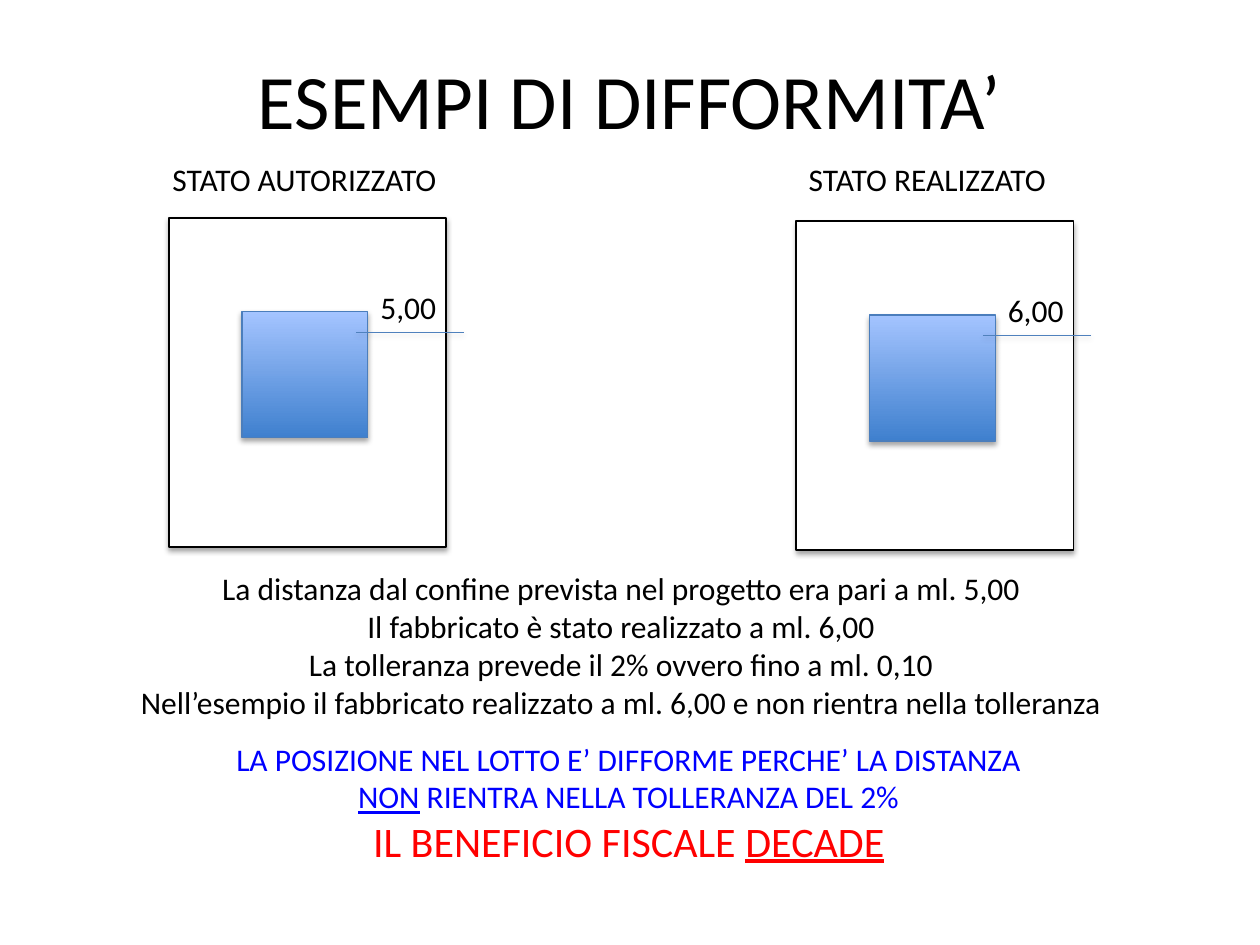
"""Build a slide comparing an authorised and an actual building position."""
from dataclasses import dataclass
from typing import NamedTuple

from lxml.etree import SubElement
from pptx import Presentation
from pptx.dml.color import RGBColor
from pptx.enum.shapes import MSO_CONNECTOR, MSO_SHAPE
from pptx.enum.text import MSO_ANCHOR, MSO_AUTO_SIZE, PP_ALIGN
from pptx.oxml.ns import qn
from pptx.util import Emu, Inches, Pt

COLUMNS, ROWS = 100, 75
SLIDE_WIDTH, SLIDE_HEIGHT = Inches(10), Inches(7.5)


@dataclass(frozen=True)
class Theme:
    font: str = "Calibri"
    title_size: int = 44
    body_size: int = 18
    verdict_size: int = 24
    ink: str = "000000"
    paper: str = "FFFFFF"
    finding: str = "0000FF"
    verdict: str = "FF0000"
    building_low: str = "3F80CE"
    building_high: str = "A4C4FF"
    building_edge: str = "4B7EBC"
    distance: str = "4F81BD"


THEME = Theme()


class Area(NamedTuple):
    column: float
    row: float
    columns: float
    rows: float

    def lengths(self) -> tuple[Emu, Emu, Emu, Emu]:
        across, down = SLIDE_WIDTH / COLUMNS, SLIDE_HEIGHT / ROWS
        return (Emu(round(self.column * across)), Emu(round(self.row * down)),
                Emu(round(self.columns * across)), Emu(round(self.rows * down)))


class Span(NamedTuple):
    text: str
    color: str = THEME.ink
    size: int = THEME.body_size
    underline: bool = False


class Plot(NamedTuple):
    heading: str
    heading_area: Area
    distance: str
    column: float
    row: float


PLOTS = (
    Plot("STATO AUTORIZZATO", Area(12.7, 12.2, 24.1, 4), "5,00", 13.4, 17.3),
    Plot("STATO REALIZZATO", Area(63.2, 12.2, 21.8, 4), "6,00", 63.2, 17.55),
)
EXPLANATION = (
    "La distanza dal confine prevista nel progetto era pari a ml. 5,00",
    "Il fabbricato è stato realizzato a ml. 6,00",
    "La tolleranza prevede il 2% ovvero fino a ml. 0,10",
    "Nell’esempio il fabbricato realizzato a ml. 6,00 e non rientra nella tolleranza",
)
CONCLUSION = (
    (Span("LA POSIZIONE NEL LOTTO E’ DIFFORME PERCHE’ LA DISTANZA ", THEME.finding),
     Span("NON", THEME.finding, underline=True),
     Span(" RIENTRA NELLA TOLLERANZA DEL 2%", THEME.finding)),
    (Span("IL BENEFICIO FISCALE ", THEME.verdict, THEME.verdict_size),
     Span("DECADE", THEME.verdict, THEME.verdict_size, True)),
)


def rgb(color: str) -> RGBColor:
    return RGBColor.from_string(color)


def write(frame, paragraphs, *, align=PP_ALIGN.LEFT) -> None:
    for index, spans in enumerate(paragraphs):
        paragraph = frame.paragraphs[0] if index == 0 else frame.add_paragraph()
        paragraph.alignment = align
        for span in spans:
            run = paragraph.add_run()
            run.text = span.text
            run.font.name = THEME.font
            run.font.size = Pt(span.size)
            run.font.color.rgb = rgb(span.color)
            run.font.underline = span.underline


def add_text(slide, area: Area, paragraphs, *, align=PP_ALIGN.LEFT, wrap=False) -> None:
    frame = slide.shapes.add_textbox(*area.lengths()).text_frame
    frame.word_wrap = wrap
    frame.auto_size = MSO_AUTO_SIZE.SHAPE_TO_FIT_TEXT
    write(frame, paragraphs, align=align)


def add_shadow(item, *, distance: float, opacity: int) -> None:
    effects = SubElement(item._element.spPr, qn("a:effectLst"))
    shadow = SubElement(effects, qn("a:outerShdw"), blurRad=str(Pt(3.1)),
                        dist=str(Pt(distance)), dir="5400000", rotWithShape="0")
    color = SubElement(shadow, qn("a:srgbClr"), val=THEME.ink)
    SubElement(color, qn("a:alpha"), val=str(opacity * 1000))


def add_rectangle(slide, area: Area, *, colors: tuple[str, ...], edge: str, weight: float) -> None:
    rectangle = slide.shapes.add_shape(MSO_SHAPE.RECTANGLE, *area.lengths())
    if len(colors) == 1:
        rectangle.fill.solid()
        rectangle.fill.fore_color.rgb = rgb(colors[0])
    else:
        rectangle.fill.gradient()
        rectangle.fill.gradient_angle = 90
        for stop, color in zip(rectangle.fill.gradient_stops, colors):
            stop.color.rgb = rgb(color)
    rectangle.line.color.rgb = rgb(edge)
    rectangle.line.width = Pt(weight)
    add_shadow(rectangle, distance=1.8, opacity=35)


def add_distance(slide, area: Area) -> None:
    left, top, width, height = area.lengths()
    line = slide.shapes.add_connector(
        MSO_CONNECTOR.STRAIGHT, left + width, top, left, top + height)
    line.line.color.rgb = rgb(THEME.distance)
    line.line.width = Pt(0.25)
    add_shadow(line, distance=1.6, opacity=38)


def add_plot(slide, plot: Plot) -> None:
    def within(column: float, row: float, columns: float, rows: float) -> Area:
        return Area(plot.column + column, plot.row + row, columns, rows)

    add_rectangle(slide, within(0, 0, 22, 26.1), colors=(THEME.paper,),
                  edge=THEME.ink, weight=1)
    add_rectangle(slide, within(5.8, 7.45, 10, 10), edge=THEME.building_edge,
                  colors=(THEME.building_low, THEME.building_high), weight=0.75)
    add_distance(slide, within(14.85, 9.07, 8.55, 0))
    add_text(slide, within(15.8, 5.07, 6.5, 4), [[Span(plot.distance)]])
    add_text(slide, plot.heading_area, [[Span(plot.heading)]])


def main() -> None:
    deck = Presentation()
    deck.slide_width, deck.slide_height = SLIDE_WIDTH, SLIDE_HEIGHT
    slide = deck.slides.add_slide(deck.slide_layouts.get_by_name("Title Only"))
    title = slide.shapes.title
    title.left, title.top, title.width, title.height = Area(5, 3, 90, 9.7).lengths()
    title.text_frame.vertical_anchor = MSO_ANCHOR.MIDDLE
    write(title.text_frame, [[Span("ESEMPI DI DIFFORMITA’", size=THEME.title_size)]],
          align=PP_ALIGN.CENTER)
    for plot in PLOTS:
        add_plot(slide, plot)
    add_text(slide, Area(9.5, 44.7, 79.6, 16.2), [[Span(line)] for line in EXPLANATION],
             align=PP_ALIGN.CENTER)
    add_text(slide, Area(17.1, 58.2, 65.6, 11.1), CONCLUSION,
             align=PP_ALIGN.CENTER, wrap=True)
    deck.save("out.pptx")


if __name__ == "__main__":
    main()
